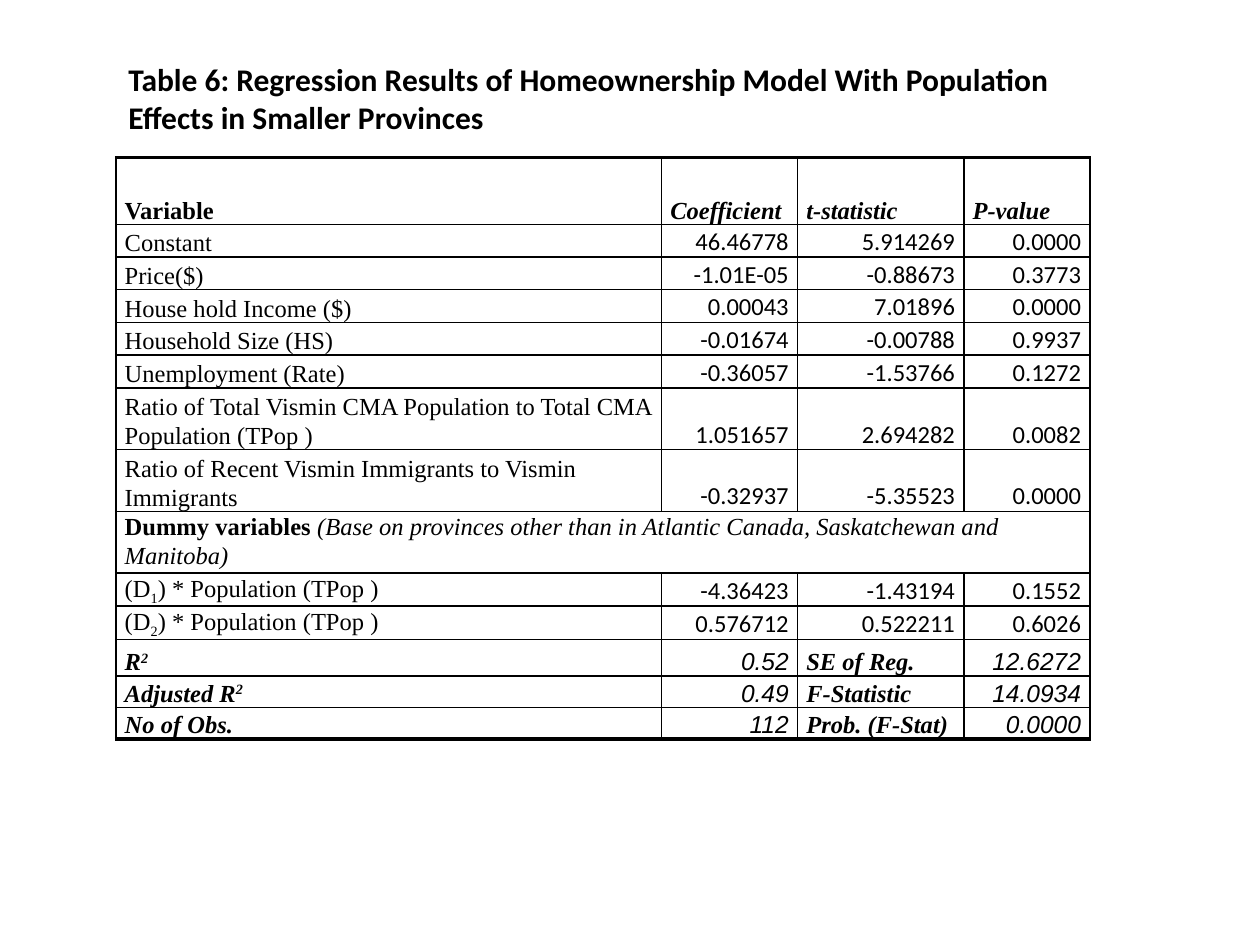
from lxml import etree
from pptx import Presentation
from pptx.dml.color import RGBColor
from pptx.enum.text import MSO_ANCHOR, PP_ALIGN
from pptx.oxml.ns import qn
from pptx.util import Inches, Pt

BOTTOM, MIDDLE, TOP = MSO_ANCHOR.BOTTOM, MSO_ANCHOR.MIDDLE, MSO_ANCHOR.TOP
LEFT, RIGHT = PP_ALIGN.LEFT, PP_ALIGN.RIGHT

COLORS = {"ink": "000000"}
SERIF, SANS, SUMMARY_FONT = "Times New Roman", "Calibri", "Arial"
TITLE = ("Table 6: Regression Results of Homeownership Model "
         "With Population Effects in Smaller Provinces")

HEADER = ["Variable", "Coefficient", "t-statistic", "P-value"]
# A label is text, or a list of (text, baseline shift in percent)
VARIABLES = [
    ("Constant", "46.46778", "5.914269", "0.0000"),
    ("Price($)", "-1.01E-05", "-0.88673", "0.3773"),
    ("House hold Income ($)", "0.00043", "7.01896", "0.0000"),
    ("Household Size (HS)", "-0.01674", "-0.00788", "0.9937"),
    ("Unemployment (Rate)", "-0.36057", "-1.53766", "0.1272"),
    ("Ratio of Total Vismin CMA Population to Total CMA Population (TPop )",
     "1.051657", "2.694282", "0.0082"),
    ("Ratio of Recent Vismin Immigrants to Vismin Immigrants",
     "-0.32937", "-5.35523", "0.0000"),
]
DUMMY_HEADING = "Dummy variables "
DUMMY_NOTE = ("(Base on provinces other than in Atlantic Canada, "
              "Saskatchewan and Manitoba)")
DUMMIES = [
    ([("(D", 0), ("1", -25), (") * Population (TPop )", 0)],
     "-4.36423", "-1.43194", "0.1552"),
    ([("(D", 0), ("2", -25), (") * Population (TPop )", 0)],
     "0.576712", "0.522211", "0.6026"),
]
SUMMARY = [
    ([("R", 0), ("2", 30)], "0.52", "SE of Reg.", "12.6272"),
    ([("Adjusted R", 0), ("2", 30)], "0.49", "F-Statistic", "14.0934"),
    ("No of Obs.", "112", "Prob. (F-Stat)", "0.0000"),
]
COLUMN_WIDTHS = [4.33, 1.08, 1.32, 1]
ROW_HEIGHTS = [0.53] + [0.26] * 5 + [0.49] * 3 + [0.26] * 2 + [0.29] + [0.25] * 2
DUMMY_ROW = 1 + len(VARIABLES)
LAST_ROW, LAST_COLUMN = len(ROW_HEIGHTS) - 1, len(COLUMN_WIDTHS) - 1


def add_run(paragraph, text, font, size=14, bold=False, italic=False, baseline=0):
    run = paragraph.add_run()
    run.text = text
    run.font.name = font
    run.font.size = Pt(size)
    run.font.bold, run.font.italic = bold, italic
    run.font.color.rgb = RGBColor.from_string(COLORS["ink"])
    if baseline:
        run.font._element.set("baseline", str(baseline * 1000))


def fill_cell(cell, content, font, align=LEFT, spacing=1.07, **style):
    paragraph = cell.text_frame.paragraphs[0]
    paragraph.alignment = align
    paragraph.line_spacing = spacing
    parts = [(content, 0)] if isinstance(content, str) else content
    for text, baseline in parts:
        add_run(paragraph, text, font, baseline=baseline, **style)


def set_borders(cell, widths):
    """Draw solid borders; widths are points for left, right, top, bottom."""
    properties = cell._tc.get_or_add_tcPr()
    for index, (tag, width) in enumerate(zip(("lnL", "lnR", "lnT", "lnB"), widths)):
        line = etree.Element(qn(f"a:{tag}"), w=str(Pt(width)))
        fill = etree.SubElement(line, qn("a:solidFill"))
        etree.SubElement(fill, qn("a:srgbClr"), val=COLORS["ink"])
        properties.insert(index, line)


def add_title(slide):
    box = slide.shapes.add_textbox(Inches(0.92), Inches(0.3), Inches(7.92), Inches(0.95))
    box.text_frame.word_wrap = True
    box.text_frame.vertical_anchor = MIDDLE
    add_run(box.text_frame.paragraphs[0], TITLE, SANS, size=18, bold=True)


def add_grid(slide):
    table = slide.shapes.add_table(
        len(ROW_HEIGHTS), len(COLUMN_WIDTHS), Inches(0.92), Inches(1.25),
        Inches(sum(COLUMN_WIDTHS)), Inches(sum(ROW_HEIGHTS))).table
    table.first_row = table.horz_banding = False
    for column, width in zip(table.columns, COLUMN_WIDTHS):
        column.width = Inches(width)
    for row_index, height in enumerate(ROW_HEIGHTS):
        table.rows[row_index].height = Inches(height)
        for column_index in range(len(COLUMN_WIDTHS)):
            cell = table.cell(row_index, column_index)
            cell.fill.background()
            cell.margin_left = cell.margin_right = Inches(0.07)
            cell.margin_top = cell.margin_bottom = 0
            cell.vertical_anchor = BOTTOM
            spans_row = row_index == DUMMY_ROW
            set_borders(cell, (
                1.5 if column_index == 0 else 1,
                1.5 if column_index == LAST_COLUMN or spans_row else 1,
                1.5 if row_index == 0 else 1,
                2.25 if row_index == LAST_ROW else 1))
    return table


def fill_table(table):
    for column, text in enumerate(HEADER):
        fill_cell(table.cell(0, column), text, SERIF, spacing=2.0,
                  bold=True, italic=column > 0)

    for first_row, rows in ((1, VARIABLES), (DUMMY_ROW + 1, DUMMIES)):
        for row, (label, *values) in enumerate(rows, first_row):
            fill_cell(table.cell(row, 0), label, SERIF)
            for column, value in enumerate(values, 1):
                fill_cell(table.cell(row, column), value, SANS, RIGHT)

    heading = table.cell(DUMMY_ROW, 0)
    heading.merge(table.cell(DUMMY_ROW, LAST_COLUMN))
    heading.vertical_anchor = TOP
    fill_cell(heading, DUMMY_HEADING, SERIF, bold=True)
    fill_cell(heading, DUMMY_NOTE, SERIF, italic=True)

    for row, entries in enumerate(SUMMARY, DUMMY_ROW + 1 + len(DUMMIES)):
        for column, entry in enumerate(entries):
            is_label = column % 2 == 0
            fill_cell(table.cell(row, column), entry,
                      SERIF if is_label else SUMMARY_FONT,
                      LEFT if is_label else RIGHT, bold=is_label, italic=True)


def main():
    presentation = Presentation()
    presentation.slide_width, presentation.slide_height = Inches(10), Inches(7.5)
    slide = presentation.slides.add_slide(presentation.slide_layouts[6])
    fill_table(add_grid(slide))
    add_title(slide)
    presentation.save("out.pptx")


if __name__ == "__main__":
    main()
